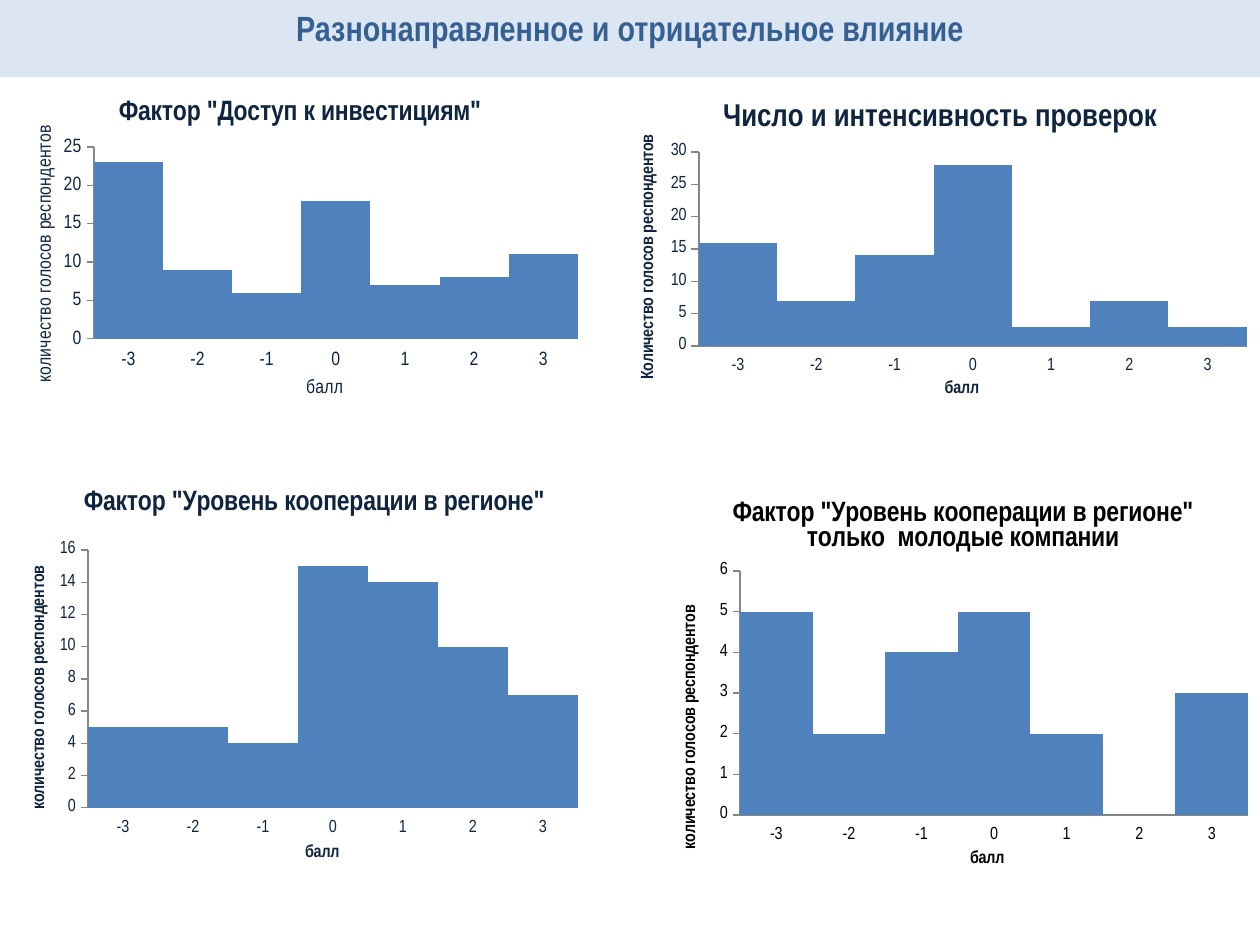
from lxml import etree
from pptx import Presentation
from pptx.chart.data import CategoryChartData
from pptx.dml.color import RGBColor
from pptx.enum.chart import XL_CHART_TYPE, XL_TICK_LABEL_POSITION, XL_TICK_MARK
from pptx.enum.text import MSO_ANCHOR, PP_ALIGN
from pptx.oxml.ns import qn
from pptx.util import Pt

COLUMN = XL_CHART_TYPE.COLUMN_CLUSTERED
LOW = XL_TICK_LABEL_POSITION.LOW
NONE, OUT = XL_TICK_MARK.NONE, XL_TICK_MARK.OUTSIDE
TOP, CENTER = MSO_ANCHOR.TOP, PP_ALIGN.CENTER
FONT = "Arial Narrow"
COLORS = {"band": "DCE6F2", "head": "376092", "bar": "4F81BD",
          "navy": "0F243E", "black": "000000", "axis": "868686"}
SCORES = ["-3", "-2", "-1", "0", "1", "2", "3"]


def color(name):
    return RGBColor.from_string(COLORS[name])


class Deck:
    def __init__(self, slide):
        self.slide = slide

    def style(self, font, size, tone, bold):
        font.name, font.size, font.bold = FONT, Pt(size), bold
        font.color.rgb = color(tone)

    def title(self, text, box):
        shape = self.slide.shapes.title
        shape.left, shape.top, shape.width, shape.height = map(Pt, box)
        shape.fill.solid()
        shape.fill.fore_color.rgb = color("band")
        frame = shape.text_frame
        frame.text = text
        frame.vertical_anchor = TOP
        frame.margin_top = Pt(5)
        para = frame.paragraphs[0]
        para.alignment = CENTER
        self.style(para.runs[0].font, 20, "head", True)

    def place(self, node, box, spot):
        for old in node.findall(qn("c:layout")):
            node.remove(old)
        layout = etree.Element(qn("c:layout"))
        manual = etree.SubElement(layout, qn("c:manualLayout"))
        inner = len(spot) == 4
        vals = {"layoutTarget": "inner"} if inner else {}
        vals.update(xMode="edge", yMode="edge",
                    x=(spot[0] - box[0]) / box[2],
                    y=(spot[1] - box[1]) / box[3])
        if inner:
            vals.update(w=spot[2] / box[2], h=spot[3] / box[3])
        for key, val in vals.items():
            text = val if isinstance(val, str) else f"{val:.4f}"
            etree.SubElement(manual, qn("c:" + key)).set("val", text)
        node.insert(0 if node.find(qn("c:tx")) is None else 1, layout)

    def label(self, title, text, size, tone, bold, box, spot):
        title.text_frame.text = text
        for para in title.text_frame.paragraphs:
            self.style(para.runs[0].font, size, tone, bold)
        self.place(title._element, box, spot)

    def chart(self, text, vals, box, plot, spots, top, step,
              votes="количество голосов респондентов",
              size=10, head=16, tone="navy", bold=True):
        data = CategoryChartData()
        data.categories = SCORES
        data.add_series("Series 1", vals)
        frame = self.slide.shapes.add_chart(COLUMN, *map(Pt, box), data)
        chart = frame.chart
        self.style(chart.font, size, tone, False)
        chart.has_legend = False
        bars = chart.plots[0]
        bars.gap_width = 0
        bars.vary_by_categories = False
        fill = bars.series[0].format.fill
        fill.solid()
        fill.fore_color.rgb = color("bar")

        score, count = chart.category_axis, chart.value_axis
        for axis, mark in ((score, NONE), (count, OUT)):
            axis.has_major_gridlines = False
            axis.major_tick_mark = mark
            axis.minor_tick_mark = NONE
            axis.format.line.color.rgb = color("axis")
            axis.format.line.width = Pt(0.75)
        score.tick_label_position = LOW
        count.minimum_scale = 0
        count.maximum_scale = top
        count.major_unit = step

        chart.has_title = True
        labels = ((chart.chart_title, text, head, True),
                  (score.axis_title, "балл", size, bold),
                  (count.axis_title, votes, size, bold))
        for (title, words, points, heavy), spot in zip(labels, spots):
            self.label(title, words, points, tone, heavy, box, spot)
        self.place(chart._chartSpace.chart.plotArea, box, plot)


def main():
    prs = Presentation()
    prs.slide_width, prs.slide_height = Pt(720), Pt(540)
    deck = Deck(prs.slides.add_slide(prs.slide_layouts[5]))
    deck.title("Разнонаправленное и отрицательное влияние",
               (0, -1.5, 720, 45.5))
    deck.chart('Фактор "Доступ к инвестициям"', [23, 9, 6, 18, 7, 8, 11],
               (0, 43.2, 337.7, 197.3), (53.7, 84, 276.6, 109.7),
               ((65, 53), (173, 213.5), (17.5, 69.5)), 25, 5,
               size=11, bold=False)
    deck.chart('Фактор "Уровень кооперации в регионе"',
               [5, 5, 4, 15, 14, 10, 7],
               (0, 272.9, 337.7, 232.6), (50.3, 314.3, 280, 147.4),
               ((45, 275.5), (172.5, 480), (15.5, 321.5)), 16, 2)
    deck.chart('Фактор "Уровень кооперации в регионе"\n'
               'только  молодые компании', [5, 2, 4, 5, 2, 0, 3],
               (377.3, 272.9, 342.7, 236.2), (422.9, 326.3, 290.3, 139.4),
               ((416.5, 283), (552.5, 484), (387.5, 344)), 6, 1,
               tone="black")
    deck.chart("Число и интенсивность проверок", [16, 7, 14, 28, 3, 7, 3],
               (348.5, 43.2, 371.5, 197.3), (399.4, 86.9, 313.1, 110.9),
               ((410, 54), (538, 215), (363.5, 75)), 30, 5,
               votes="Количество голосов респондентов", head=18)
    prs.save("out.pptx")


if __name__ == "__main__":
    main()
